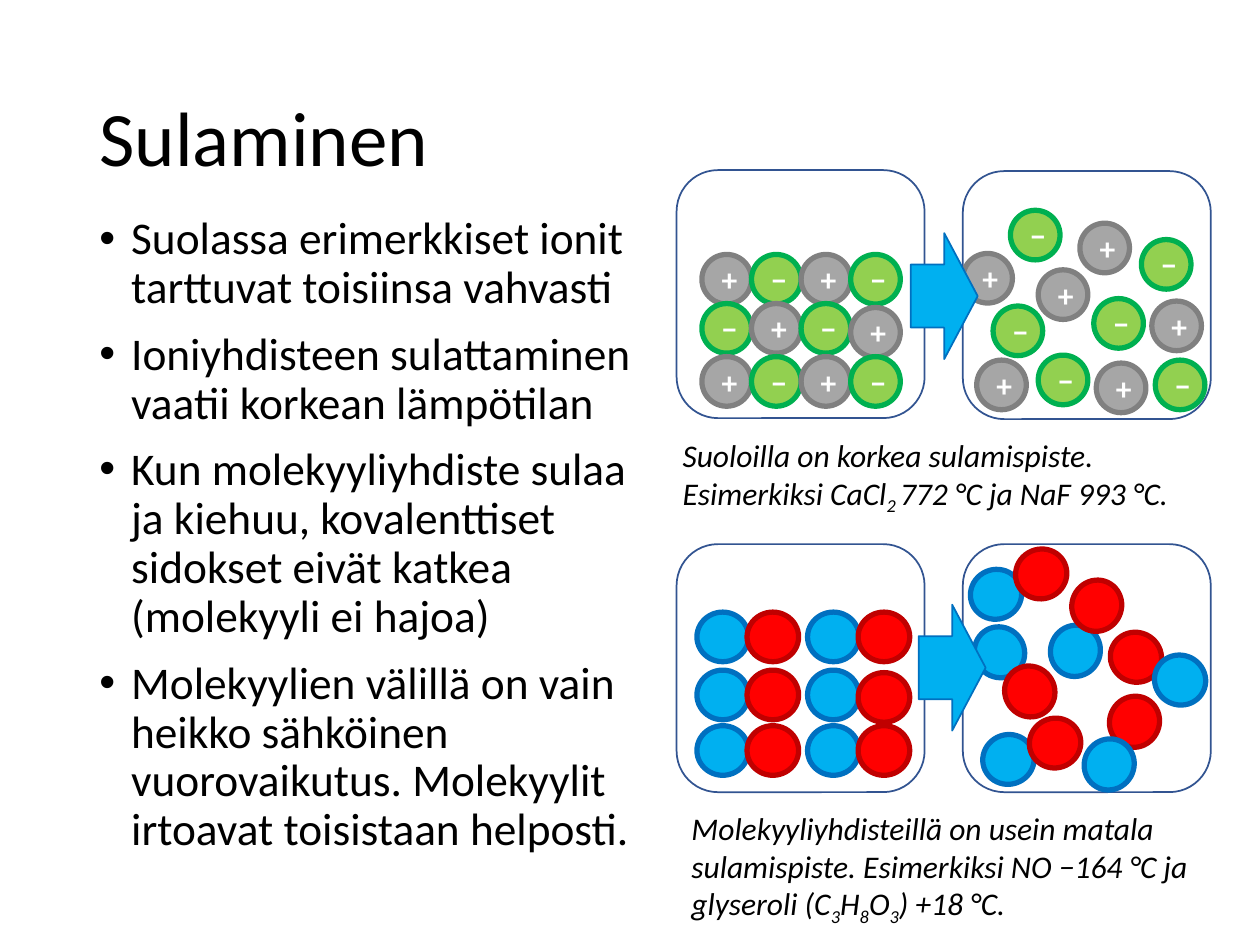
"""Build the slide on how salts and molecular compounds melt."""
from lxml.etree import SubElement as Sub
from pptx import Presentation
from pptx.dml.color import RGBColor as RGB
from pptx.enum.shapes import MSO_SHAPE as Kind
from pptx.enum.text import MSO_ANCHOR as Anchor, MSO_AUTO_SIZE as Fit, PP_ALIGN as Align
from pptx.oxml.ns import qn
from pptx.util import Cm, Pt

HUE = {
    "black": "000000", "white": "FFFFFF", "frame": "325491",
    "gray": "A6A6A6", "steel": "808080", "lime": "92D050", "green": "00B050",
    "sky": "00B0F0", "blue": "0070C0", "red": "FF0000", "wine": "C00000",
}
BALL = {
    "+": ("gray", "steel", 1), "−": ("lime", "green", 1),
    "b": ("sky", "blue", 1.04), "r": ("red", "wine", 1.04),
}
SIGN = {"size": Pt(18), "bold": True, "name": "Calibri"}
HEAD = {"size": Pt(44), "name": "Calibri"}
LIST = {"size": Pt(25.9), "name": "Calibri"}
NOTE = {"size": Pt(18), "italic": True, "name": "Calibri"}
POINTS = [
    "Suolassa erimerkkiset ionit tarttuvat toisiinsa vahvasti",
    "Ioniyhdisteen sulattaminen vaatii korkean lämpötilan",
    "Kun molekyyliyhdiste sulaa ja kiehuu, kovalenttiset sidokset eivät katkea "
    "(molekyyli ei hajoa)",
    "Molekyylien välillä on vain heikko sähköinen vuorovaikutus. "
    "Molekyylit irtoavat toisistaan helposti.",
]
NOTES = [
    (13.51, 8.66, 1.8, ["Suoloilla on korkea sulamispiste. Esimerkiksi CaCl", "2 ",
                        "772 °C ja NaF 993 °C."]),
    (13.69, 16.18, 2.57, ["Molekyyliyhdisteillä on usein matala sulamispiste. "
                          "Esimerkiksi NO −164 °C ja glyseroli (C",
                          "3", "H", "8", "O", "3", ") +18 °C."]),
]
SOLIDS = [
    (3.43, ["+−+−", "−+−+", "+−+−"], [14.15, 15.15, 16.15, 17.15],
     [5.13, 6.12, 7.19], 0.08),
    (10.97, ["brbr"] * 3, [14.05, 15.06, 16.28, 17.3],
     [12.34, 13.51, 14.63], 0.05),
]
MELTS = [
    (3.45, [
        ("+", 19.41, 5.11, 0), ("−", 20.37, 4.24, 0), ("+", 21.77, 4.5, 0),
        ("−", 23.01, 4.83, 0), ("−", 20.02, 6.17, 0), ("+", 20.93, 5.44, 0),
        ("−", 22.05, 6.02, 0), ("+", 23.22, 6.07, 0), ("+", 19.69, 7.26, 0),
        ("−", 20.93, 7.16, 0), ("+", 22.1, 7.32, 0), ("−", 23.29, 7.26, 0)]),
    (10.97, [
        ("b", 19.81, 14.81, 341.3), ("r", 20.75, 14.48, 341.3),
        ("r", 22.35, 14.05, 119.5), ("b", 21.84, 14.91, 119.5),
        ("b", 19.63, 12.65, 53.4), ("r", 20.24, 13.44, 53.4),
        ("r", 22.38, 12.75, 27.2), ("b", 23.27, 13.21, 27.2),
        ("b", 21.16, 12.62, 295.2), ("r", 21.59, 11.71, 295.2),
        ("b", 19.56, 11.48, 336.1), ("r", 20.47, 11.07, 336.1)]),
]


def write(para, text, style, hue="black"):
    run = para.add_run()
    run.text = text
    for key, value in style.items():
        setattr(run.font, key, value)
    run.font.color.rgb = RGB.from_string(HUE[hue])
    return run


def draw(home, kind, box, fill, line, width=1, turn=0, sign=""):
    shape = home.add_shape(kind, *map(Cm, box))
    shape.shadow.inherit = False
    shape.rotation = turn
    if fill:
        shape.fill.solid()
        shape.fill.fore_color.rgb = RGB.from_string(HUE[fill])
    else:
        shape.fill.background()
    shape.line.color.rgb = RGB.from_string(HUE[line])
    shape.line.width = Pt(width)
    if sign in ("+", "−"):
        frame = shape.text_frame
        frame.vertical_anchor = Anchor.MIDDLE
        frame.paragraphs[0].alignment = Align.CENTER
        write(frame.paragraphs[0], sign, SIGN, "white")


deck = Presentation()
deck.slide_width, deck.slide_height = Cm(25.4), Cm(19.05)
slide = deck.slides.add_slide(deck.slide_layouts[1])
shapes = slide.shapes

title, body = slide.placeholders
for holder, box in ((title, (1.75, 1.02, 21.9, 3.68)), (body, (1.75, 4.22, 11.79, 13.82))):
    holder.left, holder.top, holder.width, holder.height = map(Cm, box)
    holder.text_frame.word_wrap = True
    holder.text_frame.auto_size = Fit.NONE

title.text_frame.vertical_anchor = Anchor.MIDDLE
para = title.text_frame.paragraphs[0]
para.alignment = Align.LEFT
para.line_spacing = 0.9
write(para, "Sulaminen", HEAD)

frame = body.text_frame
for rank, text in enumerate(POINTS):
    para = frame.add_paragraph() if rank else frame.paragraphs[0]
    para.line_spacing = 0.9
    para.space_before = Pt(10 if rank else 0)
    props = para._p.get_or_add_pPr()
    props.set("marL", str(Cm(0.64)))
    props.set("indent", str(Cm(-0.64)))
    Sub(props, qn("a:buFont"), typeface="Arial")
    Sub(props, qn("a:buChar"), char="•")
    write(para, text, LIST)

for top, rows, lefts, tops, drop in SOLIDS:
    group = shapes.add_group_shape().shapes
    for row, (y, signs) in enumerate(zip(tops, rows)):
        for col, (x, sign) in enumerate(zip(lefts, signs)):
            fill, line, wide = BALL[sign]
            low = y + drop if (row, col) == (1, 3) else y
            draw(group, Kind.OVAL, (x, low, wide, 1), fill, line, 3, 0, sign)
    draw(group, Kind.ROUNDED_RECTANGLE, (13.64, top, 5, 5), None, "frame")

for top, balls in MELTS:
    group = shapes.add_group_shape().shapes
    draw(group, Kind.ROUNDED_RECTANGLE, (19.41, top, 5, 5), None, "frame")
    for sign, x, y, turn in balls:
        fill, line, wide = BALL[sign]
        draw(group, Kind.OVAL, (x, y, wide, 1), fill, line, 3, turn, sign)

for x, y in ((18.36, 4.7), (18.52, 12.19)):
    draw(shapes, Kind.RIGHT_ARROW, (x, y, 1.35, 2.54), "sky", "blue")

for x, y, high, parts in NOTES:
    frame = shapes.add_textbox(Cm(x), Cm(y), Cm(10.97), Cm(high)).text_frame
    frame.word_wrap = True
    frame.auto_size = Fit.SHAPE_TO_FIT_TEXT
    for rank, text in enumerate(parts):
        run = write(frame.paragraphs[0], text, NOTE)
        if rank % 2:
            run._r.get_or_add_rPr().set("baseline", "-25000")

deck.save("out.pptx")
